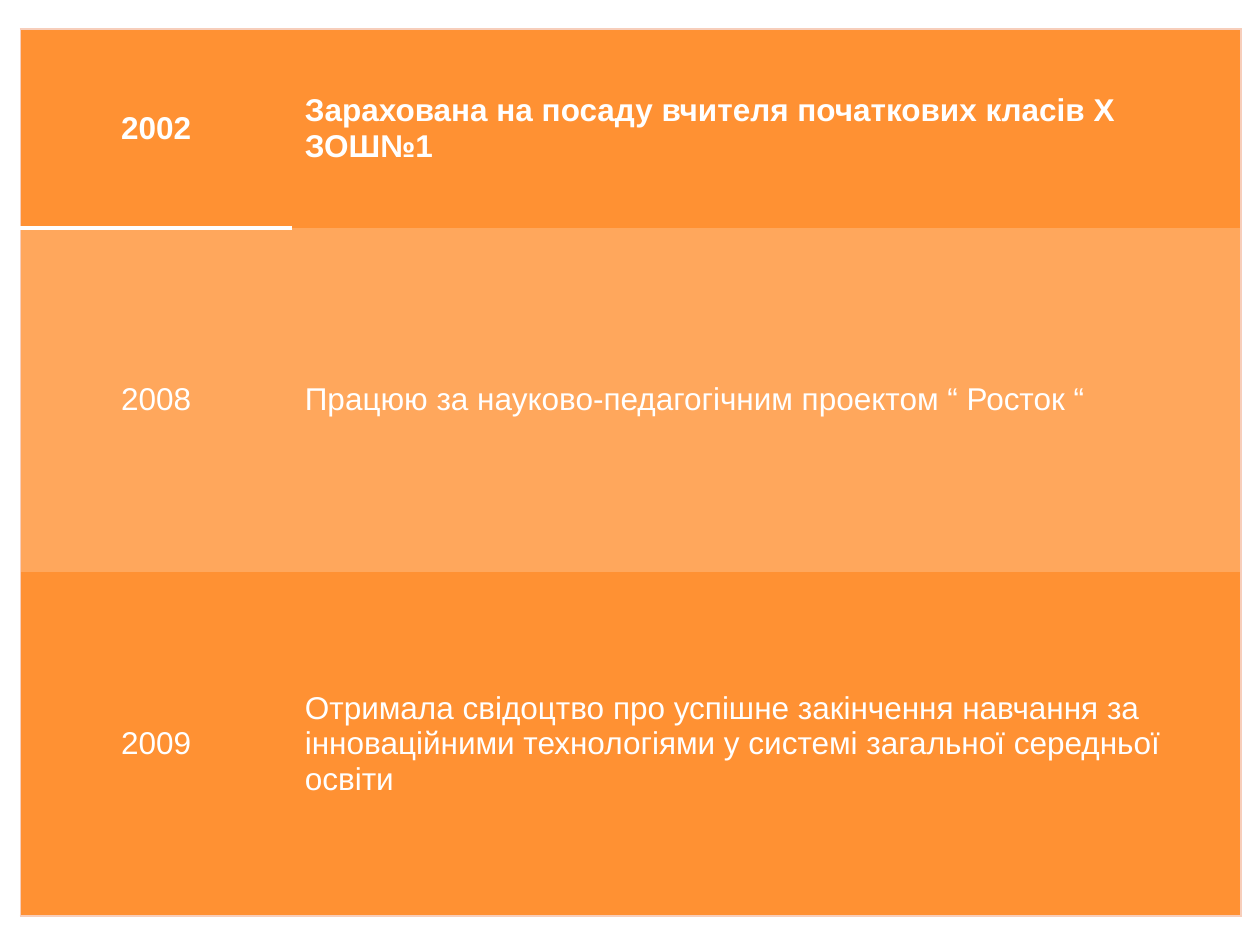
import pptx
import pptx.dml.color
import pptx.enum.text
import pptx.oxml.ns
import pptx.util
from lxml import etree

Inches = pptx.util.Inches
Pt = pptx.util.Pt
RGBColor = pptx.dml.color.RGBColor
qn = pptx.oxml.ns.qn

COLORS = {"strong": "FF9133", "light": "FFA75C", "text": "FFFFFF",
          "frame": "F7CEBB", "rule": "FFFFFF"}
PLAIN_TABLE_STYLE = "{2D5ABB26-0587-4C30-8999-92F81FD0307C}"
COLUMN_WIDTHS = (2.16, 7.53)
ROW_HEIGHTS = (1.58, 2.73, 2.73)
CAREER = [
    ("2002", "Зарахована на посаду вчителя початкових класів Х ЗОШ№1"),
    ("2008", "Працюю за науково-педагогічним проектом “ Росток “"),
    ("2009", "Отримала свідоцтво про успішне закінчення навчання за "
             "інноваційними технологіями у системі загальної середньої освіти"),
]


def set_borders(cell, borders):
    """Draw borders given as {side: (color, points)}, in L, R, T, B order."""
    properties = cell._tc.get_or_add_tcPr()
    sides = [side for side in "LRTB" if side in borders]
    for position, side in enumerate(sides):
        color, points = borders[side]
        line = etree.Element(qn(f"a:ln{side}"), w=str(Pt(points)))
        fill = etree.SubElement(line, qn("a:solidFill"))
        etree.SubElement(fill, qn("a:srgbClr"), val=COLORS[color])
        properties.insert(position, line)


def fill_cell(cell, text, fill, bold, alignment):
    cell.fill.solid()
    cell.fill.fore_color.rgb = RGBColor.from_string(COLORS[fill])
    cell.vertical_anchor = pptx.enum.text.MSO_ANCHOR.MIDDLE
    paragraph = cell.text_frame.paragraphs[0]
    paragraph.alignment = alignment
    run = paragraph.add_run()
    run.text = text
    font_format = {"name": "Arial", "size": Pt(18), "bold": bold}
    for name, value in font_format.items():
        setattr(run.font, name, value)
    run.font.color.rgb = RGBColor.from_string(COLORS["text"])


def add_career_table(slide, left, top, width, height):
    last_row, last_column = len(CAREER) - 1, len(COLUMN_WIDTHS) - 1
    table = slide.shapes.add_table(len(CAREER), len(COLUMN_WIDTHS),
                                   left, top, width, height).table
    table._tbl.tblPr.find(qn("a:tableStyleId")).text = PLAIN_TABLE_STYLE
    table.horz_banding = False
    for column, column_width in zip(table.columns, COLUMN_WIDTHS):
        column.width = Inches(column_width)
    for row, row_height in zip(table.rows, ROW_HEIGHTS):
        row.height = Inches(row_height)

    alignments = (pptx.enum.text.PP_ALIGN.CENTER, pptx.enum.text.PP_ALIGN.LEFT)
    for row_index, texts in enumerate(CAREER):
        for column_index, text in enumerate(texts):
            cell = table.cell(row_index, column_index)
            fill_cell(cell, text, "light" if row_index % 2 else "strong",
                      row_index == 0, alignments[column_index])
            # Thin frame around the whole table
            outer = {"L": column_index == 0, "R": column_index == last_column,
                     "T": row_index == 0, "B": row_index == last_row}
            borders = {side: ("frame", 0.75) for side, on in outer.items() if on}
            # Thick rule under the first year
            if row_index == 0 and column_index == 0:
                borders["B"] = ("rule", 3)
            set_borders(cell, borders)


def main():
    presentation = pptx.Presentation()
    presentation.slide_width = Inches(10)
    presentation.slide_height = Inches(7.5)
    slide = presentation.slides.add_slide(presentation.slide_layouts[6])
    add_career_table(slide, Inches(0.16), Inches(0.23),
                     Inches(sum(COLUMN_WIDTHS)), Inches(sum(ROW_HEIGHTS)))
    presentation.save("out.pptx")


if __name__ == "__main__":
    main()
